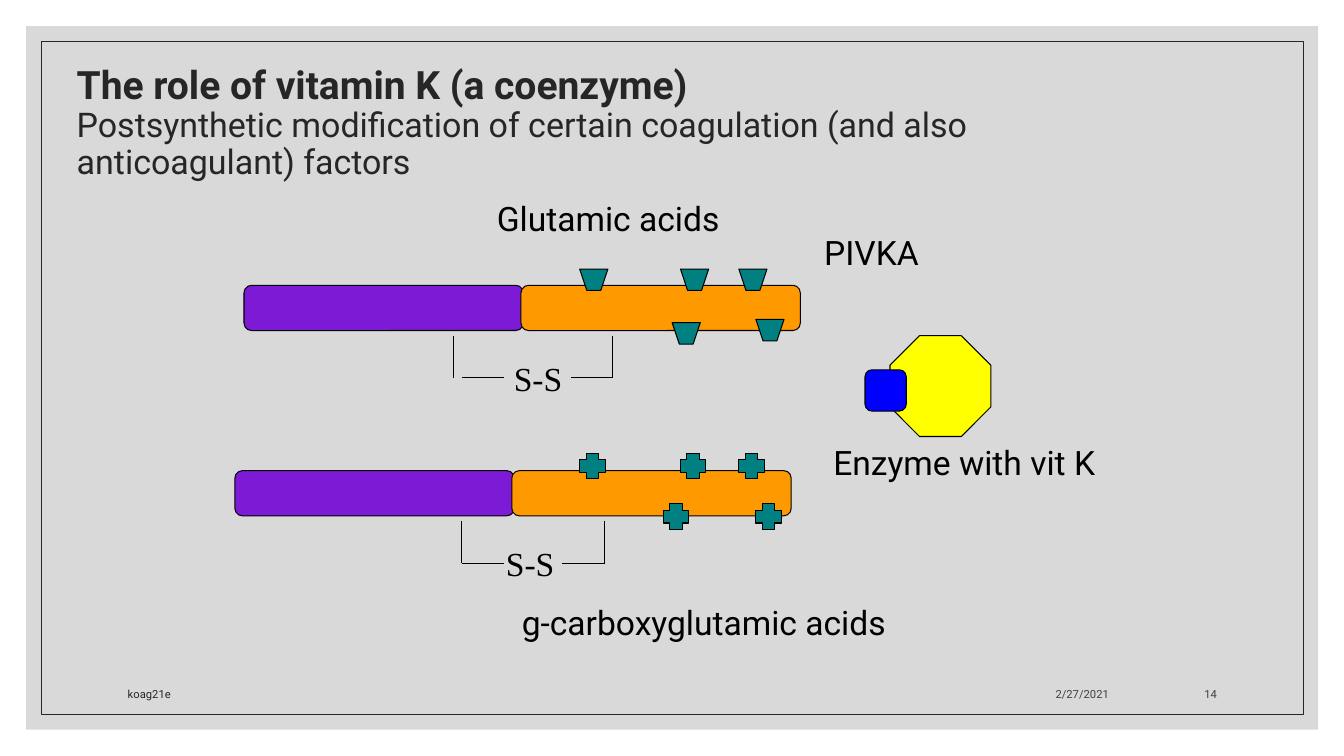
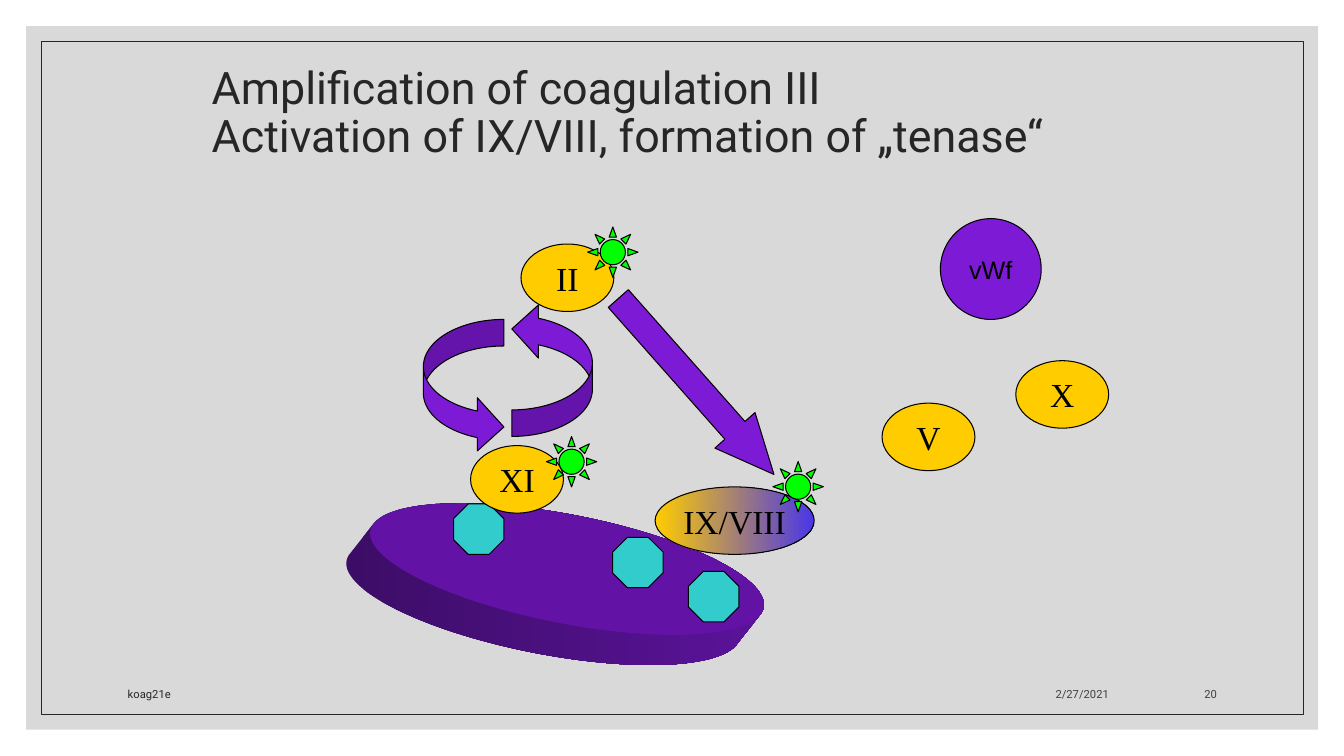
from math import cos, radians, sin

from lxml import etree
from pptx import Presentation
from pptx.dml.color import RGBColor
from pptx.enum.shapes import MSO_CONNECTOR, MSO_SHAPE
from pptx.enum.text import MSO_ANCHOR, MSO_AUTO_SIZE, PP_ALIGN
from pptx.oxml.ns import qn
from pptx.util import Cm, Pt

RECT, ROUNDED = MSO_SHAPE.RECTANGLE, MSO_SHAPE.ROUNDED_RECTANGLE
OVAL, OCTAGON = MSO_SHAPE.OVAL, MSO_SHAPE.OCTAGON
CROSS, SUN = MSO_SHAPE.CROSS, MSO_SHAPE.SUN
CURVED_RIGHT, CURVED_LEFT = MSO_SHAPE.CURVED_RIGHT_ARROW, MSO_SHAPE.CURVED_LEFT_ARROW
DOWN_ARROW = MSO_SHAPE.DOWN_ARROW
STRAIGHT = MSO_CONNECTOR.STRAIGHT
LEFT, CENTER, RIGHT = PP_ALIGN.LEFT, PP_ALIGN.CENTER, PP_ALIGN.RIGHT
TOP, MIDDLE, BOTTOM = MSO_ANCHOR.TOP, MSO_ANCHOR.MIDDLE, MSO_ANCHOR.BOTTOM
NO_FIT = MSO_AUTO_SIZE.NONE

SANS, SERIF = "Roboto", "Times New Roman"
BLACK, INK, GRAY, PANEL = "000000", "262626", "404040", "D9D9D9"
PURPLE, ORANGE, YELLOW, TEAL = "7D1AD5", "FF9900", "FFCC00", "008080"
CYAN, GREEN = "33CCCC", "00FF00"
DISC_TOP, DISC_DARK, DISC_LIGHT = "6213A6", "3C0D66", "5A1399"


def color(hex_code):
    return RGBColor.from_string(hex_code)


class SlideBuilder:
    """Holds the deck, its style and the current page; lengths are in cm."""

    def __init__(self):
        self.deck = Presentation()
        self.deck.slide_width, self.deck.slide_height = Cm(33.87), Cm(19.05)
        self.layout = self.deck.slide_layouts[5]
        self.page = None

    def add_page(self, number, title_at, title_lines):
        """title_lines is a list of (text, size, bold)."""
        first = self.page is None
        self.page = self.deck.slides.add_slide(self.layout)
        if first:
            self.frame_layout()
        self.title(title_at, title_lines)
        self.text("2/27/2021", 20.17, 16.76, 8.03, 1.02, 8, GRAY, align=RIGHT, anchor=BOTTOM)
        self.text("koag21e", 2.97, 16.76, 16.15, 1.02, 8, INK, anchor=BOTTOM)
        self.text(str(number), 28.58, 16.76, 2.34, 1.02, 8, GRAY, align=RIGHT, anchor=BOTTOM)

    def frame_layout(self):
        """Put the gray panel and its thin border on the shared layout."""
        panel = self.shape(RECT, 0.66, 0.66, 32.56, 17.73, PANEL, line=None)
        border = self.shape(RECT, 1.04, 1.04, 31.8, 16.97, None, line=INK, width_pt=0.5)
        for part in (panel, border):
            self.layout.shapes.element.append(part.element)

    def title(self, at, lines):
        title = self.page.shapes.title
        title.left, title.top, title.width, title.height = map(Cm, at)
        frame = title.text_frame
        frame.auto_size, frame.vertical_anchor, frame.word_wrap = NO_FIT, MIDDLE, True
        para = frame.paragraphs[0]
        para.alignment, para.line_spacing = LEFT, 0.9
        para.font.name, para.font.color.rgb = SANS, color(INK)
        for index, (text, size, bold) in enumerate(lines):
            if index:
                para.add_line_break()
            span = para.add_run()
            span.text = text
            span.font.size, span.font.bold = Pt(size), bold

    def style(self, shape, fill, line=BLACK, width_pt=0.75):
        """fill is a colour, a pair of colours from left to right, or None."""
        shape.shadow.inherit = False
        if fill is None:
            shape.fill.background()
        elif isinstance(fill, tuple):
            shape.fill.gradient()
            shape.fill.gradient_angle = 0
            for position, (stop, tint) in enumerate(zip(shape.fill.gradient_stops, fill)):
                stop.color.rgb, stop.position = color(tint), position
        else:
            shape.fill.solid()
            shape.fill.fore_color.rgb = color(fill)
        if line is None:
            shape.line.fill.background()
        else:
            shape.line.color.rgb, shape.line.width = color(line), Pt(width_pt)
        return shape

    def shape(self, kind, left, top, width, height, fill, adjust=(), **border):
        shape = self.page.shapes.add_shape(kind, Cm(left), Cm(top), Cm(width), Cm(height))
        for index, value in enumerate(adjust):
            shape.adjustments[index] = value
        return self.style(shape, fill, **border)

    def outline(self, points, fill, line=BLACK):
        corners = [(Cm(x), Cm(y)) for x, y in points]
        builder = self.page.shapes.build_freeform(*corners[0], scale=1.0)
        builder.add_line_segments(corners[1:], close=True)
        return self.style(builder.convert_to_shape(), fill, line)

    def line(self, x1, y1, x2, y2):
        line = self.page.shapes.add_connector(STRAIGHT, Cm(x1), Cm(y1), Cm(x2), Cm(y2))
        line.line.color.rgb, line.line.width = color(BLACK), Pt(0.75)
        etree.SubElement(line.element.spPr, qn("a:effectLst"))

    def text(self, text, left, top, width, height=1.27, size=24, ink=BLACK, font=SANS,
             align=LEFT, anchor=TOP):
        box = self.page.shapes.add_textbox(Cm(left), Cm(top), Cm(width), Cm(height))
        box.text_frame.word_wrap = True
        self.set_text(box, text, size, ink, font, align, anchor)

    def set_text(self, box, text, size, ink, font, align, anchor):
        frame = box.text_frame
        frame.vertical_anchor = anchor
        para = frame.paragraphs[0]
        para.text, para.alignment = text, align
        para.font.name, para.font.size = font, Pt(size)
        para.font.color.rgb = color(ink)

    def factor(self, name, left, top, width=2.34, height=1.7, fill=YELLOW, size=24, font=SERIF):
        """An oval with the name of a coagulation factor."""
        oval = self.shape(OVAL, left, top, width, height, fill)
        oval.text_frame.word_wrap = False
        self.set_text(oval, name, size, BLACK, font, CENTER, MIDDLE)

    def chain(self, left, top, legs, gap, label_left):
        """A two-part protein chain with its S-S bracket below."""
        self.shape(ROUNDED, left, top, 7.04, 1.14, PURPLE)
        self.shape(ROUNDED, left + 6.98, top, 7.04, 1.14, ORANGE)
        for x in legs:
            self.line(x, top + 1.27, x, top + 2.33)
        self.line(11.64, top + 2.33, gap[0], top + 2.33)
        self.line(gap[1], top + 2.33, legs[1], top + 2.33)
        self.text("S-S", label_left, top + 1.7, 2.34, font=SERIF)

    def glutamic_acid(self, left, top):
        width, height, inset = 0.71, 0.54, 0.18
        self.outline([(left, top), (left + inset, top + height),
                      (left + width - inset, top + height), (left + width, top)], TEAL)

    def platelet(self, center_x, center_y, width, height, angle, shift):
        """A tilted disc whose lower face is moved by shift."""
        turn = radians(angle)

        def rotate(x, y):
            return x * cos(turn) - y * sin(turn), x * sin(turn) + y * cos(turn)

        rim = []
        for degree in range(0, 360, 3):
            t = radians(degree)
            x, y = rotate(width / 2 * cos(t), height / 2 * sin(t))
            normal_x, normal_y = rotate(height * cos(t), width * sin(t))
            lower = normal_x * shift[0] + normal_y * shift[1] > 0
            rim.append((center_x + x + shift[0] * lower, center_y + y + shift[1] * lower))
        self.outline(rim, (DISC_DARK, DISC_LIGHT), line=None)
        face = self.shape(OVAL, center_x - width / 2, center_y - height / 2,
                          width, height, DISC_TOP, line=None)
        face.rotation = angle


def vitamin_k_page(slides):
    slides.add_page(14, (1.68, 1.45, 26.9, 3.35), [
        ("The role of vitamin K (a coenzyme)", 27.9, True),
        ("Postsynthetic modification of certain coagulation (and also anticoagulant) factors",
         24.3, False)])
    slides.chain(5.92, 11.86, (11.64, 15.24), (12.7, 14.17), 12.5)
    slides.chain(6.15, 7.19, (11.43, 15.44), (12.7, 14.4), 12.7)
    for left, top in ((18.62, 6.78), (19.05, 8.05), (17.15, 6.78), (14.61, 6.78), (16.94, 8.13)):
        slides.glutamic_acid(left, top)
    for left, top in ((18.62, 11.43), (17.15, 11.43), (14.61, 11.43), (19.05, 12.7), (16.71, 12.7)):
        slides.shape(CROSS, left, top, 0.64, 0.64, TEAL)
    slides.shape(OCTAGON, 22.43, 8.46, 2.54, 2.54, "FFFF00")
    slides.shape(ROUNDED, 21.8, 9.32, 1.04, 1.04, "0000FF")
    slides.text("Enzyme with vit K", 20.75, 11, 8.03)
    slides.text("Glutamic acids", 12.27, 4.85, 7.2)
    slides.text("g-carboxyglutamic acids", 12.9, 15.04, 10.8)
    slides.text("PIVKA", 20.52, 5.72, 3.23)


def tenase_page(slides):
    slides.add_page(20, (5.08, 0.64, 23.5, 4.45), [
        ("Amplification of coagulation III", 32, False),
        ("Activation of IX/VIII, formation of „tenase“", 32, False)])
    slides.platelet(14.29, 14.34, 10.1, 2.74, 11.1, (-0.6, 0.76))
    for left, top in ((11.43, 12.7), (15.44, 13.54), (17.35, 14.4)):
        slides.shape(OCTAGON, left, top, 1.27, 1.27, CYAN)
    slides.factor("XI", 11.86, 11.23)
    slides.factor("IX/VIII", 16.51, 12.27, width=4.01, fill=(YELLOW, "4A36E8"))
    slides.factor("II", 13.13, 6.15)
    for left, top in ((14.81, 5.72), (13.77, 11), (19.48, 11.63)):
        slides.shape(SUN, left, top, 1.27, 1.27, GREEN)
    bend = (0.33, 0.66, 0.33)
    slides.shape(CURVED_RIGHT, 10.67, 8.05, 2.03, 3.38, PURPLE, bend)
    upward = slides.shape(CURVED_LEFT, 12.9, 7.62, 2.03, 3.38, PURPLE, bend)
    upward.element.spPr.find(qn("a:xfrm")).set("flipV", "1")
    arrow = slides.shape(DOWN_ARROW, 16.87, 6.78, 1.35, 5.92, PURPLE, (0.5, 1.1))
    arrow.rotation = 318.5
    slides.factor("vWf", 23.7, 5.51, 2.54, 2.54, PURPLE, 18, "Arial")
    slides.factor("V", 22.23, 10.16)
    slides.factor("X", 25.6, 9.09)


def main():
    slides = SlideBuilder()
    vitamin_k_page(slides)
    tenase_page(slides)
    slides.deck.save("out.pptx")


if __name__ == "__main__":
    main()
